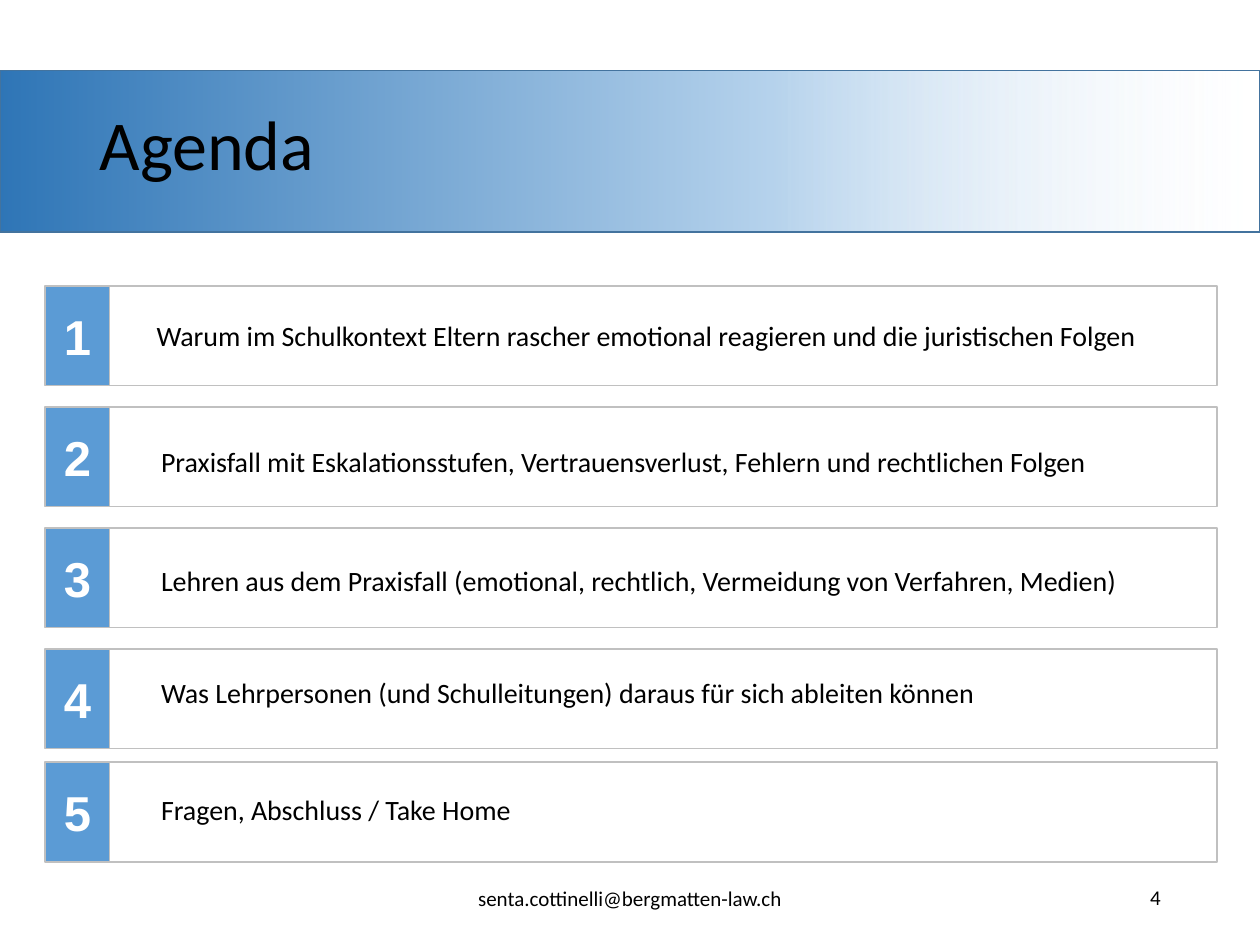
from lxml import etree
from pptx import Presentation
from pptx import util as u
from pptx.dml.color import RGBColor
from pptx.enum import shapes, text
from pptx.oxml import parse_xml
from pptx.oxml.ns import nsdecls

# Content: topic, row top, text left, text top, alignment
LEFT, CENTER, RIGHT = text.PP_ALIGN.LEFT, text.PP_ALIGN.CENTER, text.PP_ALIGN.RIGHT
TITLE = "Agenda"
TOPICS = [
    ("Warum im Schulkontext Eltern rascher emotional reagieren und die juristischen Folgen",
     2.27, 1.05, 2.51, CENTER),
    ("Praxisfall mit Eskalationsstufen, Vertrauensverlust, Fehlern und rechtlichen Folgen",
     3.23, 1.18, 3.51, LEFT),
    ("Lehren aus dem Praxisfall (emotional, rechtlich, Vermeidung von Verfahren, Medien)",
     4.19, 1.18, 4.45, LEFT),
    ("Was Lehrpersonen (und Schulleitungen) daraus für sich ableiten können",
     5.15, 1.18, 5.34, LEFT),
    ("Fragen, Abschluss / Take Home", 6.05, 1.18, 6.27, LEFT),
]
FOOTERS = [
    ("senta.cottinelli@bergmatten-law.ch", (3.31, 6.98, 3.38, 0.3), CENTER),
    ("4", (7.06, 6.97, 2.25, 0.3), RIGHT),
]
# Band stops: position %, colour, opacity %
BAND_STOPS = [(0, "F7FAFD", 0), (39, "B5D2EC", 100), (100, "2E75B6", 100)]

BLACK = RGBColor(0x00, 0x00, 0x00)
WHITE = RGBColor(0xFF, 0xFF, 0xFF)
BLUE = RGBColor(0x5B, 0x9B, 0xD5)
BAND_EDGE = RGBColor(0x43, 0x73, 0x9E)
GREY = RGBColor(0xC0, 0xC0, 0xC0)

NUMBER_LEFT, NUMBER_WIDTH = 0.36, 0.51
FRAME_LEFT, FRAME_WIDTH = 0.86, 8.8
ROW_HEIGHT = 0.79
TOPIC_WIDTH, TOPIC_HEIGHT = 8.16, 0.34


def inches(box):
    return [u.Inches(length) for length in box]


def style(frame, size, color=BLACK, name="Calibri", bold=False, align=LEFT, spacing=None):
    paragraph = frame.paragraphs[0]
    paragraph.alignment = align
    paragraph.line_spacing = spacing
    font = paragraph.runs[0].font
    font.size, font.name, font.bold = u.Pt(size), name, bold
    font.color.rgb = color


def add_box(slide, box, edge, fill=None):
    rect = slide.shapes.add_shape(shapes.MSO_SHAPE.RECTANGLE, *inches(box))
    rect.shadow.inherit = False
    rect.line.color.rgb = edge
    rect.line.width = u.Pt(1)
    if fill is None:
        rect.fill.background()
    else:
        rect.fill.solid()
        rect.fill.fore_color.rgb = fill
    return rect


def add_text(slide, words, box, size, align, spacing=None):
    frame = slide.shapes.add_textbox(*inches(box)).text_frame
    frame.word_wrap = True
    frame.text = words
    style(frame, size, align=align, spacing=spacing)


def add_band(slide):
    band = add_box(slide, (0, 0.56, 10, 1.28), BAND_EDGE)
    stops = "".join(
        f'<a:gs pos="{pos * 1000}"><a:srgbClr val="{color}">'
        f'<a:alpha val="{opacity * 1000}"/></a:srgbClr></a:gs>'
        for pos, color, opacity in BAND_STOPS)
    gradient = parse_xml(
        f'<a:gradFill {nsdecls("a")} rotWithShape="1"><a:gsLst>{stops}</a:gsLst>'
        '<a:lin ang="10800000" scaled="0"/></a:gradFill>')
    properties = band.element.spPr
    properties.replace(properties.find("{*}noFill"), gradient)


def add_title(slide):
    title = slide.shapes.title
    title.left, title.top, title.width, title.height = inches((0.69, 0.45, 8.62, 1.45))
    frame = title.text_frame
    frame.text = TITLE
    frame.vertical_anchor = text.MSO_ANCHOR.MIDDLE
    style(frame, 40, spacing=0.9)
    # Bring the title in front of the band
    slide.shapes.element.append(title.element)


def add_row(slide, number, topic, top, text_left, text_top, align):
    add_box(slide, (FRAME_LEFT, top, FRAME_WIDTH, ROW_HEIGHT), GREY)
    tile = add_box(slide, (NUMBER_LEFT, top, NUMBER_WIDTH, ROW_HEIGHT), GREY, BLUE)
    frame = tile.text_frame
    frame.margin_left = frame.margin_right = frame.margin_top = frame.margin_bottom = 0
    frame.vertical_anchor = text.MSO_ANCHOR.MIDDLE
    frame.text = str(number)
    style(frame, 28, WHITE, "Arial", True, CENTER)
    add_text(slide, topic, (text_left, text_top, TOPIC_WIDTH, TOPIC_HEIGHT), 16, align, 0.9)


def main():
    deck = Presentation()
    deck.slide_width, deck.slide_height = u.Inches(10), u.Inches(7.5)
    slide = deck.slides.add_slide(deck.slide_layouts[5])

    # Header
    add_band(slide)
    add_title(slide)

    # Agenda rows
    for number, row in enumerate(TOPICS, 1):
        add_row(slide, number, *row)

    # Footer
    for words, box, align in FOOTERS:
        add_text(slide, words, box, 12, align)

    deck.save("out.pptx")


if __name__ == "__main__":
    main()
